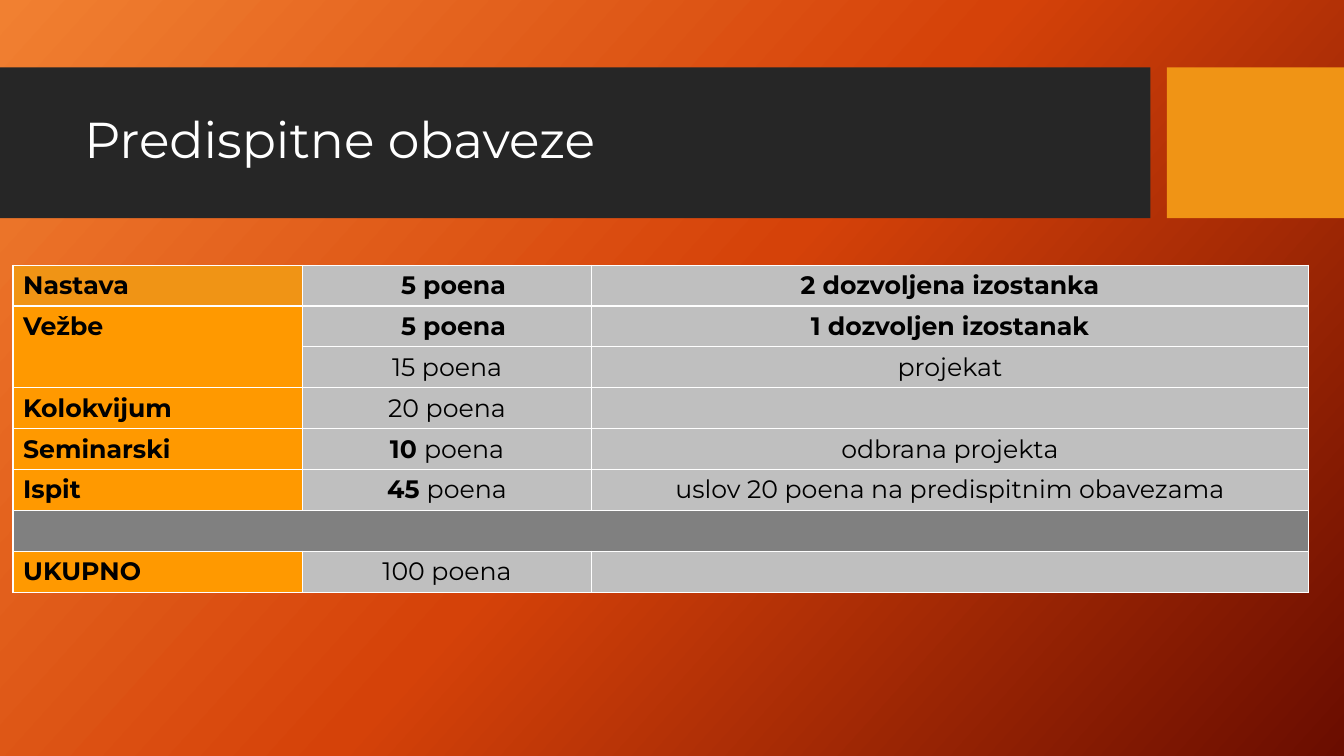
from lxml import etree
from pptx import Presentation
from pptx.dml.color import RGBColor
from pptx.enum.shapes import MSO_SHAPE
from pptx.enum.text import MSO_ANCHOR, PP_ALIGN
from pptx.oxml.ns import qn
from pptx.util import Cm, Pt

RECT = MSO_SHAPE.RECTANGLE
MIDDLE = MSO_ANCHOR.MIDDLE
LEFT, CENTER = PP_ALIGN.LEFT, PP_ALIGN.CENTER
FONT = "Montserrat"
COLORS = {
    "light": "F18031", "mid": "D54209", "deep": "6A0D00",
    "band": "262626", "accent": "F09415", "label": "FF9900",
    "cell": "BFBFBF", "gap": "808080", "white": "FFFFFF", "black": "000000",
}
ROWS = [
    ("Nastava", "*5 poena", "*2 dozvoljena izostanka"),
    ("Vežbe", "*5 poena", "*1 dozvoljen izostanak"),
    ("", "15 poena", "projekat"),
    ("Kolokvijum", "20 poena", ""),
    ("Seminarski", "10 |poena", "odbrana projekta"),
    ("Ispit", "45 |poena", "uslov 20 poena na predispitnim obavezama"),
    ("", "", ""),
    ("UKUPNO", "100 poena", ""),
]
GAP = 6


class Deck:
    """Draws styled elements on the current slide."""

    def __init__(self):
        self.prs = Presentation()
        self.prs.slide_width, self.prs.slide_height = Cm(33.87), Cm(19.05)
        self.slide = self.prs.slides.add_slide(self.prs.slide_layouts[6])

    def paint(self, fill, color):
        fill.solid()
        fill.fore_color.rgb = RGBColor.from_string(COLORS[color])

    def style(self, para, size, color, bold=None):
        font = para.font
        font.name, font.size, font.bold = FONT, Pt(size), bold
        font.color.rgb = RGBColor.from_string(COLORS[color])

    def back(self, names, angle):
        fill = self.slide.background.fill
        fill.gradient()
        fill.gradient_angle = 360 - angle
        stops = self.slide.element.find(".//" + qn("a:gsLst"))
        for stop in list(stops):
            stops.remove(stop)
        step = 100000 // (len(names) - 1)
        for i, name in enumerate(names):
            stop = etree.SubElement(stops, qn("a:gs"), pos=str(i * step))
            etree.SubElement(stop, qn("a:srgbClr"), val=COLORS[name])

    def block(self, left, width, color):
        box = self.slide.shapes.add_shape(RECT, Cm(left), Cm(1.7), Cm(width), Cm(3.8))
        box.shadow.inherit = False
        self.paint(box.fill, color)
        box.line.fill.background()

    def title(self, text):
        box = self.slide.shapes.add_textbox(Cm(1.88), Cm(2.08), Cm(26.7), Cm(3))
        frame = box.text_frame
        frame.word_wrap = True
        frame.vertical_anchor = MIDDLE
        para = frame.paragraphs[0]
        para.text = text
        para.line_spacing = 0.9
        self.style(para, 36, "white")

    def border(self, cell):
        props = cell._tc.get_or_add_tcPr()
        for side in "LRTB":
            line = etree.SubElement(props, qn("a:ln" + side), w=str(Pt(1)))
            fill = etree.SubElement(line, qn("a:solidFill"))
            etree.SubElement(fill, qn("a:srgbClr"), val=COLORS["white"])

    def cell(self, cell, text, color, align, bold):
        self.border(cell)
        self.paint(cell.fill, color)
        para = cell.text_frame.paragraphs[0]
        para.alignment = align
        parts = text.split("|")
        for part in parts:
            para.add_run().text = part
        self.style(para, 18, "black", bold)
        if len(parts) > 1:
            para.runs[0].font.bold = True

    def table(self, rows, widths, height):
        frame = self.slide.shapes.add_table(
            len(rows), len(widths), Cm(0.33), Cm(6.68),
            Cm(sum(widths)), Cm(height * len(rows)))
        grid = frame.table
        for col, width in zip(grid.columns, widths):
            col.width = Cm(width)
        for r, row in enumerate(rows):
            grid.rows[r].height = Cm(height)
            for c, text in enumerate(row):
                color = "cell" if c else "label" if r else "accent"
                bold = c == 0 or text.startswith("*")
                self.cell(grid.cell(r, c), text.lstrip("*"),
                          "gap" if r == GAP else color,
                          CENTER if c else LEFT, bold)
        for r in (0, 1):
            grid.cell(r, 1).margin_left = Cm(0.58)
        grid.cell(1, 0).merge(grid.cell(2, 0))
        grid.cell(GAP, 0).merge(grid.cell(GAP, len(widths) - 1))


def main():
    deck = Deck()
    deck.back(("light", "mid", "deep"), 42)
    deck.block(0, 28.99, "band")
    deck.block(29.41, 4.46, "accent")
    deck.title("Predispitne obaveze")
    deck.table(ROWS, (7.29, 7.29, 18.06), 1.03)
    deck.prs.save("out.pptx")


if __name__ == "__main__":
    main()
